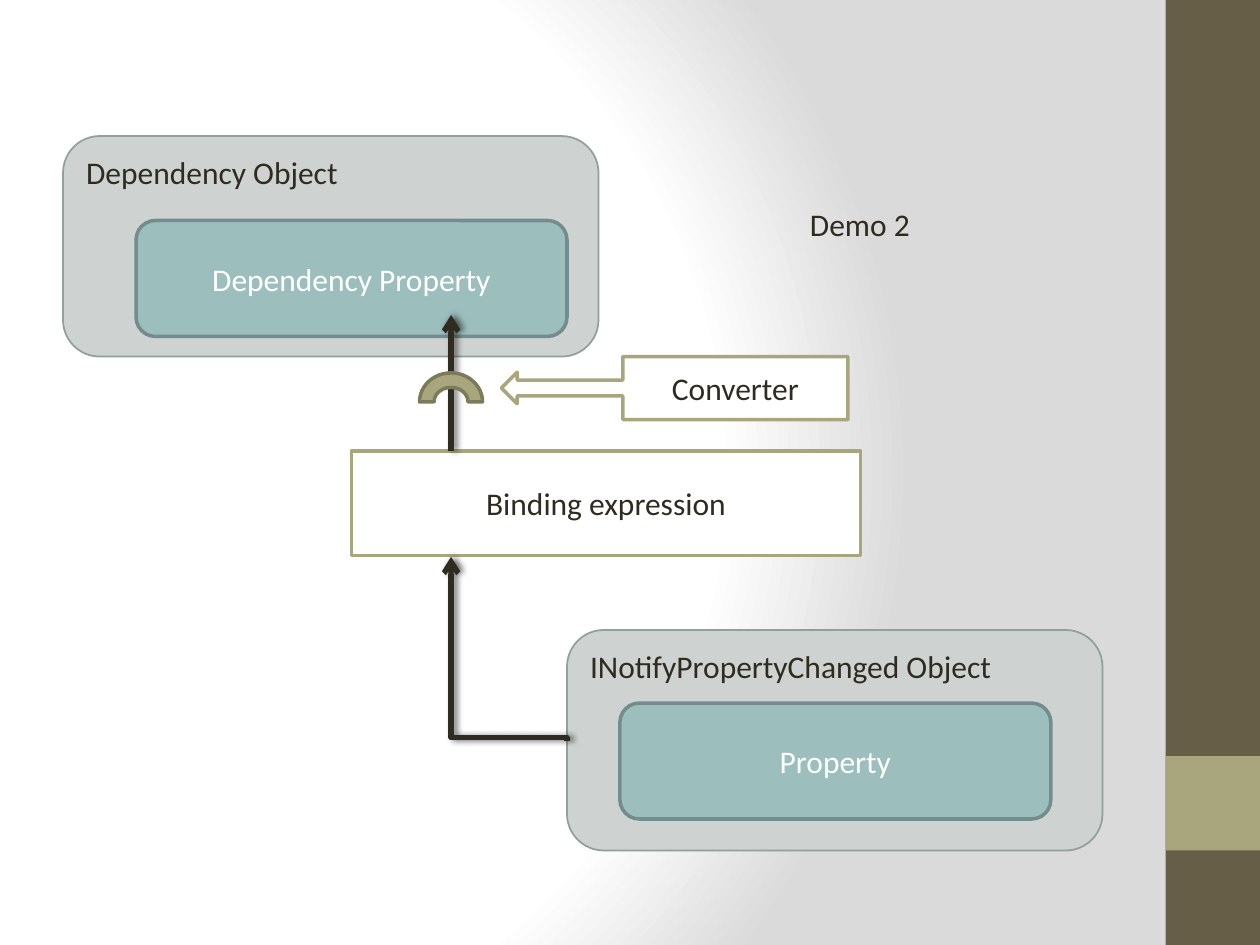
from lxml import etree
from pptx import Presentation
from pptx.dml.color import RGBColor
from pptx.enum.shapes import MSO_CONNECTOR, MSO_SHAPE
from pptx.enum.text import MSO_ANCHOR, MSO_AUTO_SIZE, PP_ALIGN
from pptx.oxml import parse_xml
from pptx.oxml.ns import qn
from pptx.util import Inches, Pt

RECT, ROUNDED = MSO_SHAPE.RECTANGLE, MSO_SHAPE.ROUNDED_RECTANGLE
ARC, CALLOUT = MSO_SHAPE.BLOCK_ARC, MSO_SHAPE.LEFT_ARROW_CALLOUT
STRAIGHT, ELBOW = MSO_CONNECTOR.STRAIGHT, MSO_CONNECTOR.ELBOW
TOP, MIDDLE = MSO_ANCHOR.TOP, MSO_ANCHOR.MIDDLE
LEFT, CENTER = PP_ALIGN.LEFT, PP_ALIGN.CENTER
FIT_SHAPE = MSO_AUTO_SIZE.SHAPE_TO_FIT_TEXT

WIDTH, HEIGHT = 10, 7.5
BAND = 0.75
FLOW_X = 3.58
INK, WHITE, BROWN, OLIVE = "2F2B20", "FFFFFF", "675E47", "A9A57C"
NAMESPACE = 'xmlns:a="http://schemas.openxmlformats.org/drawingml/2006/main"'


def color(value):
    return RGBColor.from_string(value)


def inches(*lengths):
    return [Inches(length) for length in lengths]


def write(frame, text, ink=INK, align=LEFT):
    frame.text = text
    paragraph = frame.paragraphs[0]
    paragraph.alignment = align
    font = paragraph.runs[0].font
    font.name, font.size = "Calibri", Pt(18)
    font.color.rgb = color(ink)


def add_block(slide, kind, box, fill, border=None, weight=2):
    block = slide.shapes.add_shape(kind, *inches(*box))
    block.shadow.inherit = False
    block.fill.solid()
    block.fill.fore_color.rgb = color(fill)
    if border:
        block.line.color.rgb = color(border)
        block.line.width = Pt(weight)
    else:
        block.line.fill.background()
    return block


def add_labelled(slide, kind, box, text, fill, border, ink=INK):
    block = add_block(slide, kind, box, fill, border)
    block.text_frame.vertical_anchor = MIDDLE
    write(block.text_frame, text, ink, CENTER)


def add_container(slide, left, top, text):
    container = add_block(slide, ROUNDED, (left, top, 4.25, 1.75), "CED3D1", "91A09A", 1)
    container.text_frame.vertical_anchor = TOP
    write(container.text_frame, text)


def add_property(slide, left, top, text):
    add_labelled(slide, ROUNDED, (left, top, 3.42, 0.92), text, "9CBEBD", "738D8C", WHITE)


def add_arrow(slide, kind, start, end):
    arrow = slide.shapes.add_connector(kind, *inches(*start, *end))
    arrow.line.color.rgb = color(INK)
    arrow.line.width = Pt(3)
    outline = arrow.line._get_or_add_ln()
    etree.SubElement(outline, qn("a:tailEnd"), type="arrow")
    properties = arrow._element.spPr
    properties.append(parse_xml(
        f'<a:effectLst {NAMESPACE}><a:outerShdw blurRad="{Pt(4)}" dist="{Pt(2)}" dir="0">'
        '<a:srgbClr val="000000"><a:alpha val="60000"/></a:srgbClr>'
        '</a:outerShdw></a:effectLst>'))
    return arrow


def turn_elbow(arrow, degrees, bend):
    properties = arrow._element.spPr
    properties.find(qn("a:xfrm")).set("rot", str(degrees * 60000))
    adjustments = properties.find(qn("a:prstGeom")).find(qn("a:avLst"))
    etree.SubElement(adjustments, qn("a:gd"), name="adj1", fmla=f"val {bend}")


def paint_background(slide):
    fill = slide.background.fill
    fill.solid()
    solid = slide.element.find(".//" + qn("p:bgPr")).find(qn("a:solidFill"))
    stops = "".join(
        f'<a:gs pos="{share * 1000}"><a:srgbClr val="{tone}"/></a:gs>'
        for share, tone in ((0, WHITE), (75, WHITE), (100, "DADADA")))
    solid.getparent().replace(solid, parse_xml(
        f'<a:gradFill {NAMESPACE} rotWithShape="1"><a:gsLst>{stops}</a:gsLst>'
        '<a:path path="circle">'
        '<a:fillToRect l="20000" t="50000" r="100000" b="50000"/>'
        '</a:path></a:gradFill>'))


def add_side_band(slide):
    left = WIDTH - BAND
    add_block(slide, RECT, (left, 0, BAND, HEIGHT), BROWN)
    add_block(slide, RECT, (left, HEIGHT - 2 * BAND, BAND, BAND), OLIVE)


def add_caption(slide, box, text):
    caption = slide.shapes.add_textbox(*inches(*box))
    caption.text_frame.word_wrap = False
    caption.text_frame.auto_size = FIT_SHAPE
    write(caption.text_frame, text)


def main():
    deck = Presentation()
    deck.slide_width, deck.slide_height = inches(WIDTH, HEIGHT)
    slide = deck.slides.add_slide(deck.slide_layouts[6])
    paint_background(slide)
    add_side_band(slide)

    add_container(slide, 0.5, 1.08, "Dependency Object")
    add_property(slide, 1.08, 1.75, "Dependency Property")
    add_labelled(slide, RECT, (2.79, 3.58, 4.04, 0.83), "Binding expression", WHITE, OLIVE)
    add_container(slide, 4.5, 5, "INotifyPropertyChanged Object")
    source_arrow = add_arrow(slide, ELBOW, (3.31, 5.61), (4.77, 4.69))
    turn_elbow(source_arrow, 270, 1700)
    add_arrow(slide, STRAIGHT, (FLOW_X, 3.58), (FLOW_X, 2.5))
    add_property(slide, 4.92, 5.58, "Property")

    add_caption(slide, (6.33, 1.58, 1, 0.4), "Demo 2")
    add_block(slide, ARC, (FLOW_X - 0.25, 2.96, 0.5, 0.46), OLIVE, "7D7A5C")
    add_labelled(slide, CALLOUT, (3.98, 2.83, 2.75, 0.5), "Converter", WHITE, OLIVE)
    deck.save("out.pptx")


if __name__ == "__main__":
    main()
